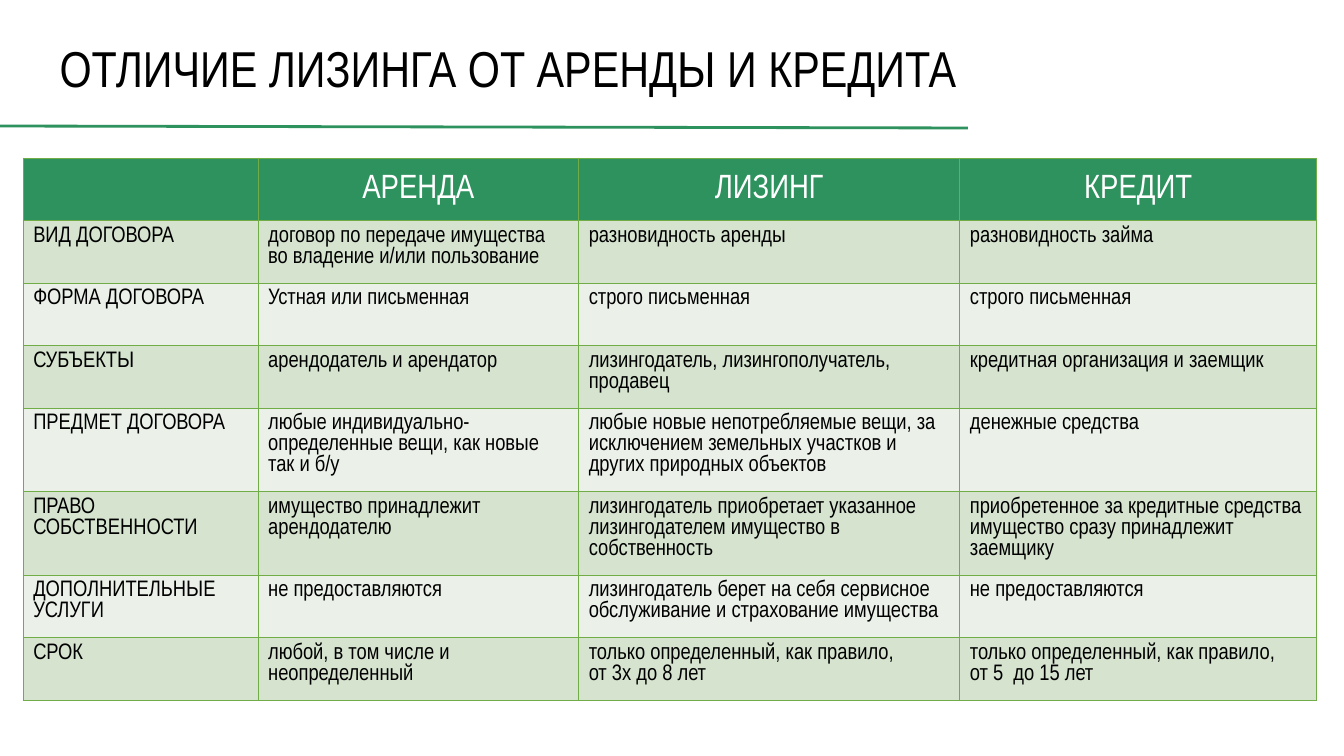
from lxml import etree
from pptx import Presentation
from pptx.dml.color import RGBColor
from pptx.enum.shapes import MSO_CONNECTOR
from pptx.enum.text import MSO_ANCHOR, MSO_AUTO_SIZE, PP_ALIGN
from pptx.oxml.ns import qn
from pptx.util import Inches, Pt

LEFT, CENTER = PP_ALIGN.LEFT, PP_ALIGN.CENTER
TOP, MIDDLE = MSO_ANCHOR.TOP, MSO_ANCHOR.MIDDLE
STRAIGHT = MSO_CONNECTOR.STRAIGHT
NO_AUTOFIT = MSO_AUTO_SIZE.NONE

FONT = "Arial Narrow"
BLACK = RGBColor(0x00, 0x00, 0x00)
WHITE = RGBColor(0xFF, 0xFF, 0xFF)
GREEN = RGBColor(0x2E, 0x92, 0x5F)
BORDER = RGBColor(0x70, 0xAD, 0x47)
BANDS = (RGBColor(0xD5, 0xE3, 0xCF), RGBColor(0xEB, 0xF1, 0xE9))

SLIDE_WIDTH, SLIDE_HEIGHT = Inches(13.33), Inches(7.5)
COLUMN_WIDTHS = (2.33, 3.18, 3.78, 3.54)
ROW_HEIGHT, TALL_ROW_HEIGHT = 0.62, 0.83
TALL_ROWS = (4, 5)

TITLE = "ОТЛИЧИЕ ЛИЗИНГА ОТ АРЕНДЫ И КРЕДИТА"
COMPARISON = (
    ("", "АРЕНДА", "ЛИЗИНГ", "КРЕДИТ"),
    ("ВИД ДОГОВОРА",
     "договор по передаче имущества во владение и/или пользование",
     "разновидность аренды",
     "разновидность займа"),
    ("ФОРМА ДОГОВОРА",
     "Устная или письменная",
     "строго письменная",
     "строго письменная"),
    ("СУБЪЕКТЫ",
     "арендодатель и арендатор",
     "лизингодатель, лизингополучатель, продавец",
     "кредитная организация и заемщик"),
    ("ПРЕДМЕТ ДОГОВОРА",
     "любые индивидуально-определенные вещи, как новые так и б/у",
     "любые новые непотребляемые вещи, за исключением земельных участков "
     "и других природных объектов",
     "денежные средства"),
    ("ПРАВО СОБСТВЕННОСТИ",
     "имущество принадлежит арендодателю",
     "лизингодатель приобретает указанное лизингодателем имущество "
     "в собственность",
     "приобретенное за кредитные средства имущество сразу принадлежит\n"
     "заемщику"),
    ("ДОПОЛНИТЕЛЬНЫЕ УСЛУГИ",
     "не предоставляются",
     "лизингодатель берет на себя сервисное обслуживание "
     "и страхование имущества",
     "не предоставляются"),
    ("СРОК",
     "любой, в том числе и неопределенный",
     "только определенный, как правило,\nот 3х до 8 лет",
     "только определенный, как правило,\nот 5  до 15 лет"),
)


def write_text(frame, text, size, color, align):
    frame.text = text
    for paragraph in frame.paragraphs:
        paragraph.alignment = align
        paragraph.font.size = Pt(size)
        for run in paragraph.runs:
            run.font.name = FONT
            run.font.size = Pt(size)
            run.font.color.rgb = color


def place_title(title):
    title.left, title.top = Inches(0.39), Inches(0.46)
    title.width, title.height = Inches(11.5), Inches(0.49)
    frame = title.text_frame
    write_text(frame, TITLE, 36, BLACK, LEFT)
    frame.auto_size = NO_AUTOFIT
    frame.word_wrap = True
    frame.vertical_anchor = MIDDLE
    frame.margin_left = Inches(0.2)
    frame.paragraphs[0].line_spacing = 0.9


def add_title_rule(slide):
    rule = slide.shapes.add_connector(
        STRAIGHT, 0, Inches(1.25), Inches(9.6), Inches(1.27))
    rule.line.color.rgb = GREEN
    rule.line.width = Pt(2)
    etree.SubElement(rule._element.spPr, qn("a:effectLst"))


def outline_cell(cell):
    properties = cell._tc.get_or_add_tcPr()
    for side in ("a:lnL", "a:lnR", "a:lnT", "a:lnB"):
        edge = etree.SubElement(properties, qn(side), w=str(Pt(1)))
        fill = etree.SubElement(edge, qn("a:solidFill"))
        etree.SubElement(fill, qn("a:srgbClr"), val=str(BORDER))


def fill_cell(cell, text, row):
    is_header = row == 0
    outline_cell(cell)
    cell.fill.solid()
    cell.fill.fore_color.rgb = GREEN if is_header else BANDS[(row - 1) % 2]
    cell.vertical_anchor = MIDDLE if is_header else TOP
    if is_header:
        write_text(cell.text_frame, text, 24, WHITE, CENTER)
    else:
        write_text(cell.text_frame, text, 16, BLACK, LEFT)


def add_comparison(slide):
    heights = [TALL_ROW_HEIGHT if row in TALL_ROWS else ROW_HEIGHT
               for row in range(len(COMPARISON))]
    table = slide.shapes.add_table(
        len(heights), len(COLUMN_WIDTHS), Inches(0.23), Inches(1.57),
        Inches(sum(COLUMN_WIDTHS)), Inches(sum(heights))).table
    for column, width in zip(table.columns, COLUMN_WIDTHS):
        column.width = Inches(width)
    for row, (height, texts) in enumerate(zip(heights, COMPARISON)):
        table.rows[row].height = Inches(height)
        for column, text in enumerate(texts):
            fill_cell(table.cell(row, column), text, row)


def main():
    presentation = Presentation()
    presentation.slide_width = SLIDE_WIDTH
    presentation.slide_height = SLIDE_HEIGHT
    title_only = presentation.slide_layouts[5]
    slide = presentation.slides.add_slide(title_only)
    place_title(slide.shapes.title)
    add_title_rule(slide)
    add_comparison(slide)
    presentation.save("out.pptx")


if __name__ == "__main__":
    main()
